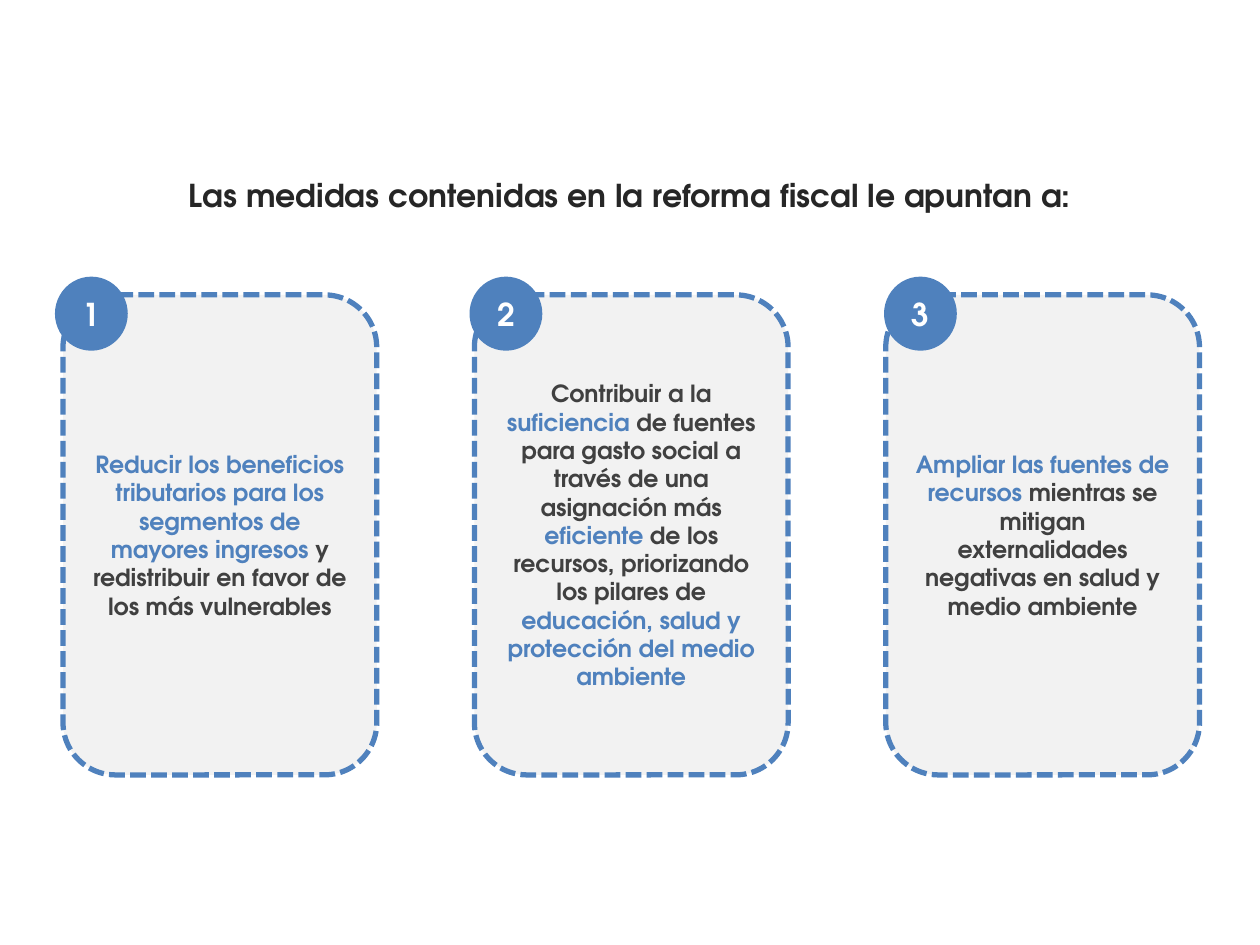
from dataclasses import dataclass

from pptx import Presentation
from pptx.dml.color import RGBColor
from pptx.enum.dml import MSO_LINE
from pptx.enum.shapes import MSO_SHAPE
from pptx.enum.text import MSO_ANCHOR, PP_ALIGN
from pptx.util import Inches, Pt

ROUND_RECT = MSO_SHAPE.ROUNDED_RECTANGLE
OVAL = MSO_SHAPE.OVAL
SYS_DASH = MSO_LINE.SQUARE_DOT
CENTER = PP_ALIGN.CENTER
TOP, MIDDLE = MSO_ANCHOR.TOP, MSO_ANCHOR.MIDDLE


@dataclass(frozen=True)
class Theme:
    font: str = "TeX Gyre Adventor"
    accent: str = "4F81BD"
    card: str = "F2F2F2"
    title: str = "262626"
    body: str = "404040"
    white: str = "FFFFFF"
    heading_size: float = 18
    body_size: float = 13.5


THEME = Theme()

# Each measure is a list of (text, highlighted) parts.
MEASURES = [
    [("Reducir los beneficios tributarios para los segmentos de mayores ingresos ", True),
     ("y redistribuir en favor de los más vulnerables", False)],
    [("Contribuir a la ", False),
     ("suficiencia", True),
     (" de fuentes para gasto social a través de una asignación más ", False),
     ("eficiente", True),
     (" de los recursos, priorizando los pilares de ", False),
     ("educación, salud y protección del medio ambiente", True)],
    [("Ampliar las fuentes de recursos ", True),
     ("mientras se mitigan externalidades negativas en salud y medio ambiente", False)],
]


def write_text(sp, parts, size, anchor=MIDDLE, margins=(0.1, 0.05)):
    """Write (text, colour) parts as one bold centred paragraph."""
    tf = sp.text_frame
    tf.word_wrap = True
    tf.vertical_anchor = anchor
    tf.margin_left = tf.margin_right = Inches(margins[0])
    tf.margin_top = tf.margin_bottom = Inches(margins[1])
    p = tf.paragraphs[0]
    p.alignment = CENTER
    for text, color in parts:
        r = p.add_run()
        r.text = text
        r.font.name = THEME.font
        r.font.size = Pt(size)
        r.font.bold = True
        r.font.color.rgb = RGBColor.from_string(color)


def add_outlined(slide, kind, box, fill, line_width):
    sp = slide.shapes.add_shape(kind, *map(Inches, box))
    sp.shadow.inherit = False
    sp.fill.solid()
    sp.fill.fore_color.rgb = RGBColor.from_string(fill)
    sp.line.color.rgb = RGBColor.from_string(THEME.accent)
    sp.line.width = Pt(line_width)
    return sp


def add_title(slide, box, text):
    sp = slide.shapes.add_textbox(*map(Inches, box))
    write_text(sp, [(text, THEME.title)], THEME.heading_size,
               anchor=TOP, margins=(0.07, 0.04))


def add_card(slide, box, measure):
    sp = add_outlined(slide, ROUND_RECT, box, THEME.card, 3)
    sp.line.dash_style = SYS_DASH
    parts = [(text, THEME.accent if highlighted else THEME.body)
             for text, highlighted in measure]
    write_text(sp, parts, THEME.body_size)


def add_badge(slide, box, number):
    sp = add_outlined(slide, OVAL, box, THEME.accent, 2)
    write_text(sp, [(str(number), THEME.white)], THEME.heading_size)


def add_measures(slide, box):
    """Spread the numbered cards evenly over the box."""
    left, top, width, height = box
    card_width = 2.49
    card_pitch = (width - card_width) / (len(MEASURES) - 1)
    badge_pitch = 3.29
    for i, measure in enumerate(MEASURES):
        add_card(slide, (left + i * card_pitch, top, card_width, height), measure)
        add_badge(slide, (left - 0.05 + i * badge_pitch, top - 0.13, 0.55, 0.56), i + 1)


def main():
    prs = Presentation()
    prs.slide_width, prs.slide_height = Inches(10), Inches(7.5)
    slide = prs.slides.add_slide(prs.slide_layouts[6])
    add_title(slide, (0.36, 1.36, 9.28, 0.38),
              "Las medidas contenidas en la reforma fiscal le apuntan a:")
    add_measures(slide, (0.5, 2.34, 9.02, 3.81))
    prs.save("out.pptx")


if __name__ == "__main__":
    main()
